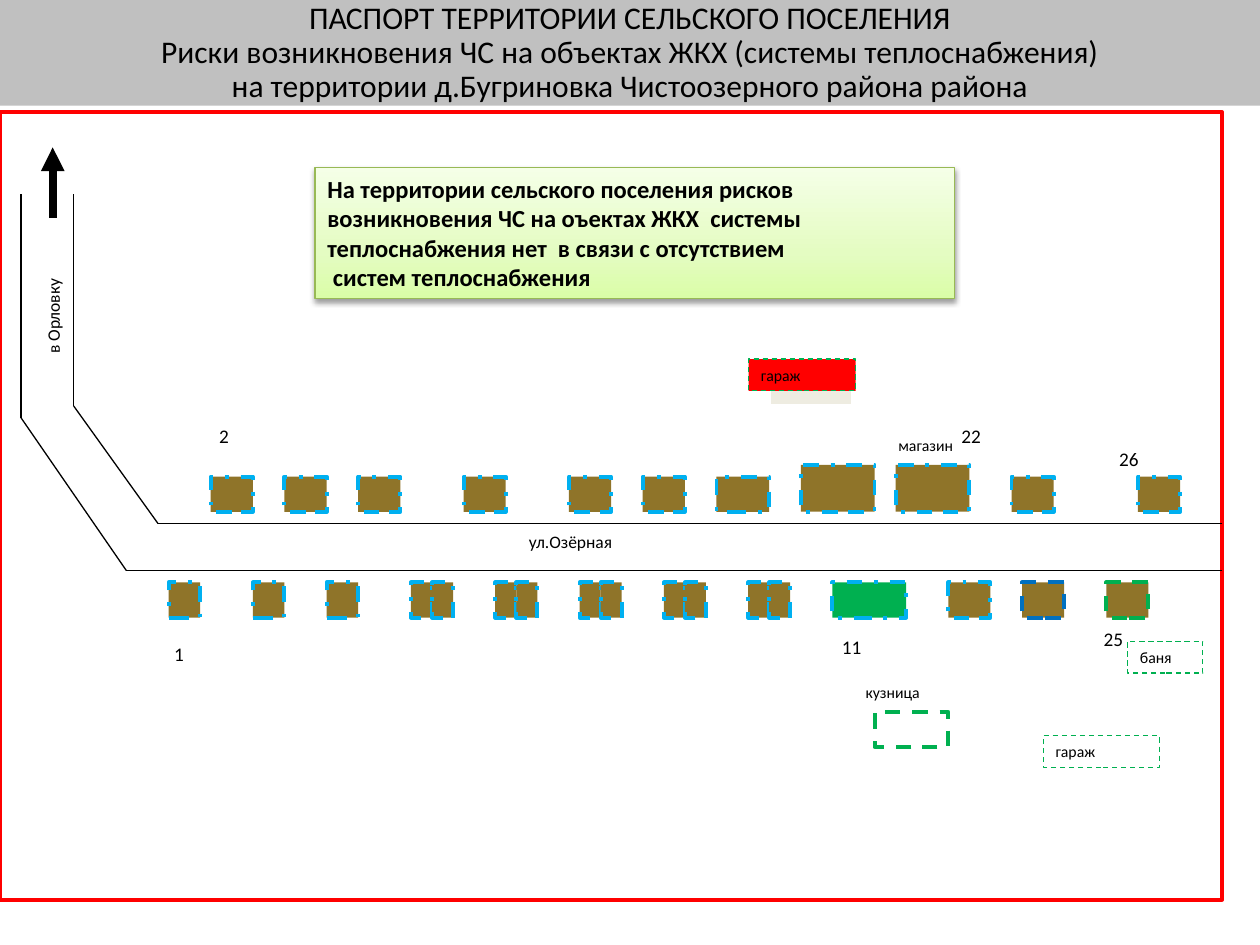
from itertools import pairwise

from lxml import etree
from pptx import Presentation
from pptx.dml.color import RGBColor as RGB
from pptx.enum.dml import MSO_LINE_DASH_STYLE as Dash
from pptx.enum.shapes import MSO_CONNECTOR, MSO_SHAPE
from pptx.enum.text import MSO_ANCHOR, MSO_AUTO_SIZE as Fit, PP_ALIGN
from pptx.oxml import parse_xml
from pptx.oxml.ns import nsdecls, qn
from pptx.util import Cm, Pt

BLACK, WHITE = RGB(0, 0, 0), RGB(255, 255, 255)
GREY, CREAM = RGB(0xC0, 0xC0, 0xC0), RGB(0xEE, 0xEC, 0xE1)
RED, BROWN = RGB(255, 0, 0), RGB(0x8F, 0x74, 0x29)
SKY, BLUE = RGB(0, 0xB0, 0xF0), RGB(0, 0x70, 0xC0)
GREEN, OLIVE = RGB(0, 0xB0, 0x50), RGB(0x98, 0xB9, 0x55)
FONT = "Calibri"
COLS, ROWS = 116, 67  # the map lies on this grid

TITLE = ("ПАСПОРТ ТЕРРИТОРИИ СЕЛЬСКОГО ПОСЕЛЕНИЯ\v"
         "Риски возникновения ЧС на объектах ЖКХ (системы теплоснабжения)\v"
         "на территории д.Бугриновка Чистоозерного района района")
NOTICE = ("На территории сельского поселения рисков возникновения ЧС "
          "на оъектах ЖКХ  системы теплоснабжения нет  в связи с отсутствием\n"
          " систем теплоснабжения")


def style(obj, **vals):
    for name, val in vals.items():
        setattr(obj, name, val)


def write(shape, text, size, bold=False, align=PP_ALIGN.LEFT, pads=None, **frame):
    """Put text in a shape; pads are the side and the top margins in cm."""
    tf = shape.text_frame
    style(tf, text=text, **frame)
    if pads:
        side, top = map(Cm, pads)
        style(tf, margin_left=side, margin_right=side,
              margin_top=top, margin_bottom=top)
    for par in tf.paragraphs:
        par.alignment = align
        style(par.font, name=FONT, size=Pt(size), bold=bold)
        par.font.color.rgb = BLACK


def rect(slide, box, fill, line, width, dash=None):
    shape = slide.shapes.add_shape(MSO_SHAPE.RECTANGLE, *box)
    shape.shadow.inherit = False
    if fill is not None:
        shape.fill.solid()
        shape.fill.fore_color.rgb = fill
    shape.line.color.rgb = line
    style(shape.line, width=Pt(width), dash_style=dash)
    return shape


def stroke(slide, start, end, width):
    line = slide.shapes.add_connector(MSO_CONNECTOR.STRAIGHT, *start, *end)
    line.line.color.rgb = BLACK
    line.line.width = Pt(width)
    etree.SubElement(line._element.spPr, qn("a:effectLst"))
    return line


def banner(slide, box):
    title = slide.shapes.title
    style(title, **dict(zip(("left", "top", "width", "height"), box)))
    title.fill.solid()
    title.fill.fore_color.rgb = GREY
    write(title, TITLE, 18, align=PP_ALIGN.CENTER, pads=(0.1, 0.05),
          auto_size=Fit.NONE, vertical_anchor=MSO_ANCHOR.MIDDLE)
    title.text_frame.paragraphs[0].line_spacing = 0.9


def spot(box, col, row):
    """Turn a grid place into a slide point."""
    left, top, width, height = box
    return round(left + col * width / COLS), round(top + row * height / ROWS)


def cell(box, col, row, wide, high):
    x, y = spot(box, col, row)
    right, low = spot(box, col + wide, row + high)
    return x, y, right - x, low - y


def roads(slide, box):
    rect(slide, box, WHITE, RED, 2)
    for edge in ([(COLS, 39), (12, 39), (2, 26), (2, 7)],
                 [(COLS, 35), (15, 35), (7, 25), (7, 7)]):
        for start, end in pairwise(edge):
            stroke(slide, spot(box, *start), spot(box, *end), 0.75)
    arrow = stroke(slide, spot(box, 5, 9), spot(box, 5, 3), 4.5)
    etree.SubElement(arrow.line._get_or_add_ln(), qn("a:tailEnd"), type="triangle")


def houses(slide, box):
    def house(col, row, wide, high=3, fill=BROWN, line=SKY, dash=Dash.DASH_DOT):
        rect(slide, cell(box, col, row, wide, high), fill, line, 2.25, dash)

    for col in (20, 27, 34, 44, 54, 61, 96, 108):
        house(col, 31, 4)
    house(68, 31, 5)
    for col in (76, 85):
        house(col, 30, 7, 4)

    for col in (16, 24, 31):
        house(col, 40, 3)
    for col in range(39, 72, 8):  # semi-detached pairs
        house(col, 40, 2)
        house(col + 2, 40, 2)
    house(79, 40, 7, fill=GREEN)
    house(90, 40, 4)
    house(97, 40, 4, line=BLUE, dash=Dash.DASH)
    house(105, 40, 4, line=GREEN, dash=Dash.DASH)

    house(83, 51, 7, fill=WHITE, line=GREEN, dash=Dash.DASH)
    house(73, 22, 8, fill=CREAM, line=WHITE, dash=None)


def labels(slide, box):
    left, top = box[:2]

    def place(x, y, wide, high):
        return left + Cm(x), top + Cm(y), Cm(wide), Cm(high)

    for text, x, y, wide, fill in (("гараж", 15.09, 4.98, 2.16, RED),
                                   ("баня", 22.73, 10.67, 1.52, WHITE),
                                   ("гараж", 21.03, 12.57, 2.34, WHITE)):
        shed = rect(slide, place(x, y, wide, 0.64), fill, GREEN, 0.75, Dash.DASH)
        write(shed, text, 9, word_wrap=True, auto_size=Fit.SHAPE_TO_FIT_TEXT,
              vertical_anchor=MSO_ANCHOR.TOP)

    for text, x, y, wide, size, turn in (
            ("магазин", 17.86, 6.4, 1.63, 9, 0),
            ("кузница", 17.2, 11.38, 1.6, 9, 0),
            ("ул.Озёрная", 10.41, 8.31, 2.24, 10, 0),
            ("в Орловку", 0.03, 3.76, 2.06, 10, 270)):
        name = slide.shapes.add_textbox(*place(x, y, wide, 0.66))
        name.rotation = turn
        write(name, text, size, word_wrap=False, auto_size=Fit.SHAPE_TO_FIT_TEXT)

    for text, x, y in (("25", 22.07, 10.29), ("26", 22.38, 6.65),
                       ("1", 3.33, 10.59), ("2", 4.24, 6.2),
                       ("22", 19.2, 6.2), ("11", 16.79, 10.44)):
        num = slide.shapes.add_textbox(*place(x, y, 1.65, 0.66))
        write(num, text, 11, pads=(0.18, 0.1), word_wrap=True,
              auto_size=Fit.SHAPE_TO_FIT_TEXT)


def notice(slide, box):
    card = rect(slide, box, None, OLIVE, 0.75)
    stops = "".join(
        f'<a:gs pos="{pos * 1000}"><a:srgbClr val="{tint}"/></a:gs>'
        for pos, tint in ((0, "DAFDA7"), (35, "E4FCC2"), (100, "F5FFE7")))
    props = card._element.spPr
    props.find(qn("a:prstGeom")).addnext(parse_xml(
        f'<a:gradFill {nsdecls("a")} rotWithShape="1"><a:gsLst>{stops}</a:gsLst>'
        '<a:lin ang="16200000" scaled="0"/></a:gradFill>'))
    props.find(qn("a:effectLst")).append(parse_xml(
        f'<a:outerShdw {nsdecls("a")} blurRad="{Pt(3.1)}" dist="{Pt(1.6)}" '
        'dir="5400000" rotWithShape="0"><a:srgbClr val="000000">'
        '<a:alpha val="38000"/></a:srgbClr></a:outerShdw>'))
    write(card, NOTICE, 14, bold=True, word_wrap=True,
          auto_size=Fit.SHAPE_TO_FIT_TEXT, vertical_anchor=MSO_ANCHOR.TOP)


def main():
    deck = Presentation()
    style(deck, slide_width=Cm(25.4), slide_height=Cm(19.05))
    slide = deck.slides.add_slide(deck.slide_layouts[5])
    plan = Cm(0), Cm(2.26), Cm(24.64), Cm(15.88)
    banner(slide, (Cm(0), Cm(0), deck.slide_width, Cm(2.13)))
    for draw in (roads, houses, labels):
        draw(slide, plan)
    notice(slide, (Cm(6.35), Cm(3.38), Cm(12.9), Cm(2.64)))
    deck.save("out.pptx")


if __name__ == "__main__":
    main()
